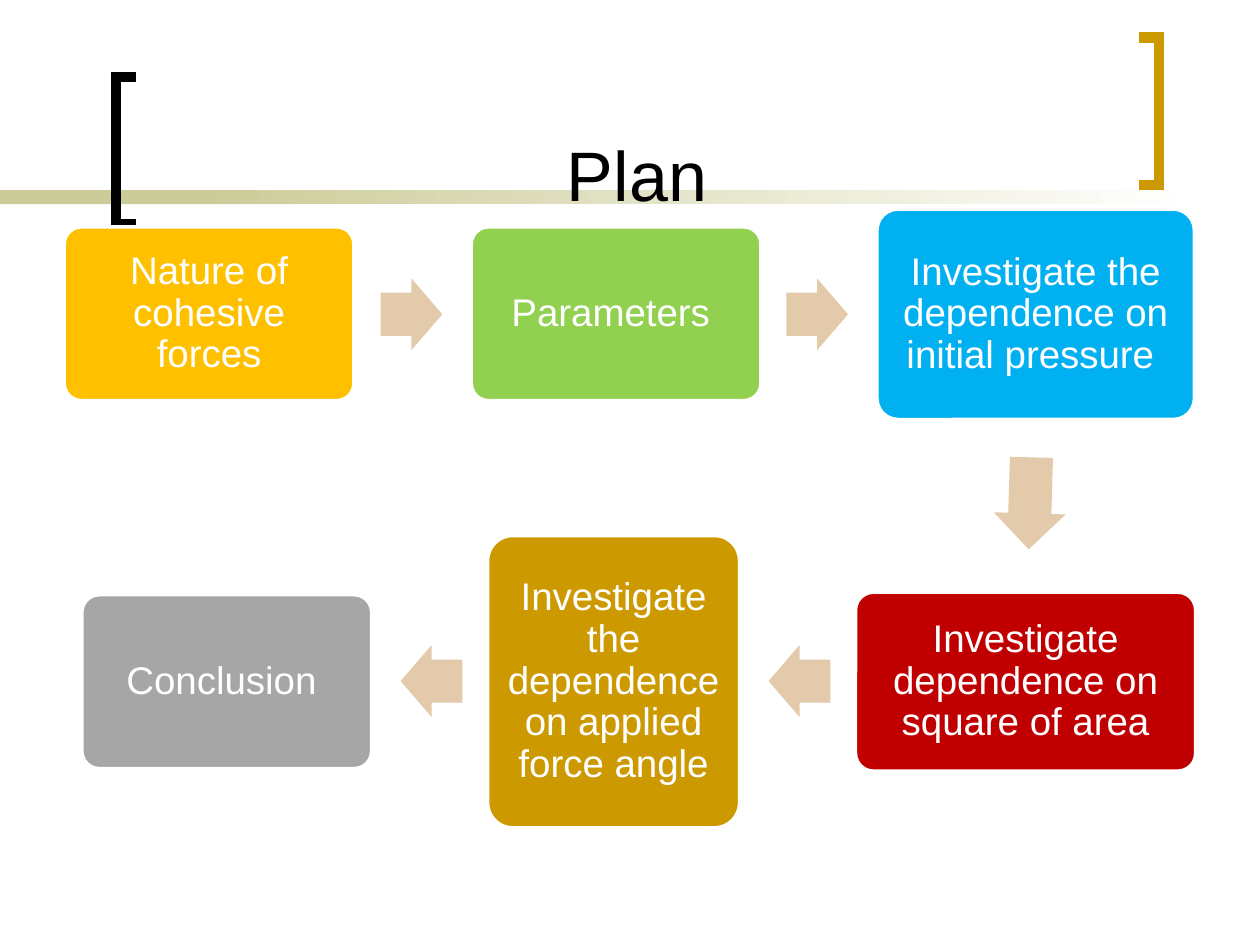
from dataclasses import dataclass

from lxml import etree
from pptx import Presentation
from pptx.dml.color import RGBColor
from pptx.enum.shapes import MSO_SHAPE
from pptx.enum.text import MSO_ANCHOR, PP_ALIGN
from pptx.oxml.ns import qn
from pptx.util import Inches, Pt


@dataclass(frozen=True)
class Theme:
    font: str = "Arial"
    title_size: int = 40
    step_size: int = 22
    black: str = "000000"
    white: str = "FFFFFF"
    band: str = "CCCC99"
    gold: str = "CC9900"
    arrow: str = "E2CAAB"
    amber: str = "FFC000"
    green: str = "92D050"
    blue: str = "00B0F0"
    red: str = "C00000"
    gray: str = "A6A6A6"


class SlideBuilder:
    def __init__(self, slide, theme):
        self.slide = slide
        self.theme = theme

    def shape(self, kind, box, color):
        sp = self.slide.shapes.add_shape(kind, *map(Inches, box))
        sp.shadow.inherit = False
        sp.fill.solid()
        sp.fill.fore_color.rgb = RGBColor.from_string(color)
        sp.line.fill.background()
        return sp

    def label(self, sp, text, size, color, anchor):
        tf = sp.text_frame
        tf.word_wrap = True
        tf.vertical_anchor = anchor
        tf.text = text
        p = tf.paragraphs[0]
        p.alignment = PP_ALIGN.CENTER
        font = p.runs[0].font
        font.name = self.theme.font
        font.size = Pt(size)
        font.color.rgb = RGBColor.from_string(color)
        return tf

    def fading_band(self, box, start, end):
        sp = self.shape(MSO_SHAPE.RECTANGLE, box, start)
        sp.fill.gradient()
        sp.fill.gradient_angle = 0
        for stop, position, color in zip(sp.fill.gradient_stops, (0, 1), (start, end)):
            stop.position = position
            stop.color.rgb = RGBColor.from_string(color)

    def bracket(self, tip, spine, top, bottom, color):
        points = [(Inches(x), Inches(y)) for x, y in
                  ((tip, top), (spine, top), (spine, bottom), (tip, bottom))]
        builder = self.slide.shapes.build_freeform(*points[0])
        builder.add_line_segments(points[1:], close=False)
        sp = builder.convert_to_shape()
        sp.shadow.inherit = False
        sp.fill.background()
        sp.line.width = Pt(6)
        sp.line.color.rgb = RGBColor.from_string(color)
        etree.SubElement(sp.element.spPr.find(qn("a:ln")), qn("a:miter"), lim="800000")

    def title(self, box, text):
        sp = self.slide.shapes.add_textbox(*map(Inches, box))
        self.label(sp, text, self.theme.title_size, self.theme.black, MSO_ANCHOR.BOTTOM)

    def step(self, box, text, color):
        sp = self.shape(MSO_SHAPE.ROUNDED_RECTANGLE, box, color)
        sp.adjustments[0] = 0.1
        sp.line.width = Pt(2)
        sp.line.color.rgb = RGBColor.from_string(self.theme.white)
        tf = self.label(sp, text, self.theme.step_size, self.theme.white, MSO_ANCHOR.MIDDLE)
        tf.margin_left = tf.margin_right = tf.margin_top = tf.margin_bottom = Inches(0.09)
        tf.paragraphs[0].line_spacing = 0.9

    def arrow(self, left, top, length, rotation):
        sp = self.shape(MSO_SHAPE.RIGHT_ARROW, (left, top, length, 0.57), self.theme.arrow)
        sp.adjustments[0], sp.adjustments[1] = 0.6, 0.5
        sp.rotation = rotation


def main():
    prs = Presentation()
    prs.slide_width, prs.slide_height = Inches(10), Inches(7.5)
    theme = Theme()
    s = SlideBuilder(prs.slides.add_slide(prs.slide_layouts[6]), theme)

    s.shape(MSO_SHAPE.RECTANGLE, (0, 1.51, 2.33, 0.11), theme.band)
    s.fading_band((1.58, 1.51, 7.92, 0.11), theme.band, theme.white)
    s.bracket(1.08, 0.92, 0.61, 1.78, theme.black)
    s.bracket(9.04, 9.2, 0.3, 1.47, theme.gold)
    s.title((1.14, 0.21, 7.83, 1.55), "Plan")

    steps = [
        ((0.51, 1.8, 2.3, 1.38), "Nature of cohesive forces", theme.amber),
        ((3.74, 1.8, 2.3, 1.38), "Parameters ", theme.green),
        ((6.96, 1.66, 2.52, 1.67), "Investigate the dependence on initial pressure ", theme.blue),
        ((6.79, 4.7, 2.7, 1.42), "Investigate dependence on square of area", theme.red),
        ((3.87, 4.25, 2, 2.32), "Investigate the dependence on applied force angle", theme.gold),
        ((0.65, 4.72, 2.3, 1.38), "Conclusion ", theme.gray),
    ]
    for box, text, color in steps:
        s.step(box, text, color)

    arrows = [
        (3.02, 2.21, 0.49, 0),
        (6.24, 2.21, 0.49, 0),
        (7.81, 3.71, 0.73, 91.7),
        (6.1, 5.12, 0.49, 180),
        (3.18, 5.12, 0.49, 180),
    ]
    for arrow in arrows:
        s.arrow(*arrow)

    prs.save("out.pptx")


if __name__ == "__main__":
    main()
